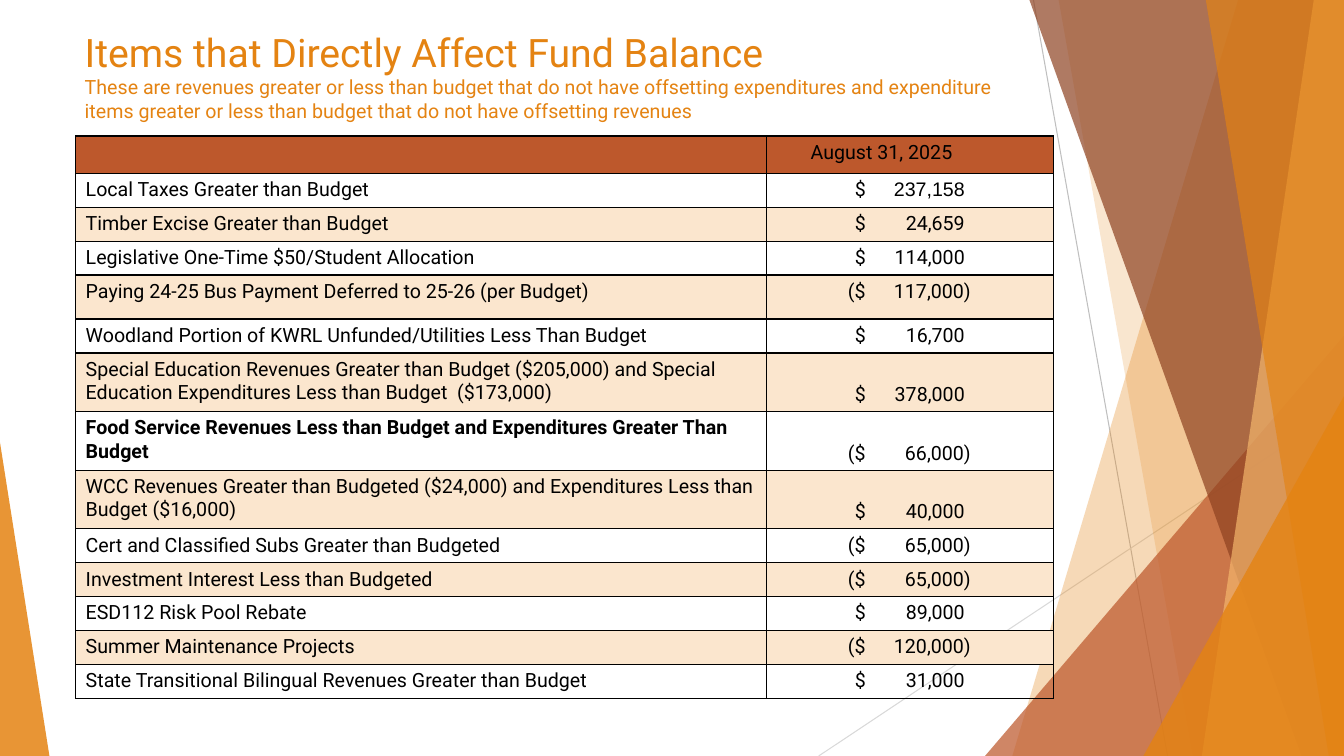
from lxml.etree import SubElement
from pptx import Presentation
from pptx.dml.color import RGBColor
from pptx.enum.shapes import MSO_CONNECTOR, MSO_SHAPE
from pptx.enum.text import MSO_ANCHOR, MSO_AUTO_SIZE, PP_ALIGN
from pptx.oxml.ns import qn
from pptx.util import Inches, Pt

ORANGE = RGBColor(0xE4, 0x83, 0x12)
RUST = RGBColor(0xBD, 0x58, 0x2C)
BROWN = RGBColor(0x8E, 0x42, 0x21)
PEACH = RGBColor(0xF3, 0xB5, 0x6C)
CREAM = RGBColor(0xFB, 0xE6, 0xCE)
SILVER = RGBColor(0xBF, 0xBF, 0xBF)
PALE_GRAY = RGBColor(0xD9, 0xD9, 0xD9)
BLACK = RGBColor(0, 0, 0)

# Content
HEADING = "Items that Directly Affect Fund Balance"
EXPLANATION = (
    "These are revenues greater or less than budget that do not have offsetting "
    "expenditures and expenditure items greater or less than budget that do not "
    "have offsetting revenues"
)
PERIOD = "August 31, 2025"
# Item, amount, row height relative to a one-line row
ITEMS = [
    ("Local Taxes Greater than Budget", 237158, 1),
    ("Timber Excise Greater than Budget", 24659, 1),
    ("Legislative One-Time $50/Student Allocation", 114000, 1),
    ("Paying 24-25 Bus Payment Deferred to 25-26 (per Budget)", -117000, 1.3),
    ("Woodland Portion of KWRL Unfunded/Utilities Less Than Budget", 16700, 1),
    ("Special Education Revenues Greater than Budget ($205,000) and Special "
     "Education Expenditures Less than Budget  ($173,000)", 378000, 1.73),
    ("Food Service Revenues Less than Budget and Expenditures Greater Than Budget",
     -66000, 1.73),
    ("WCC Revenues Greater than Budgeted ($24,000) and Expenditures Less than "
     "Budget ($16,000)", 40000, 1.73),
    ("Cert and Classified Subs Greater than Budgeted", -65000, 1),
    ("Investment Interest Less than Budgeted", -65000, 1),
    ("ESD112 Risk Pool Rebate", 89000, 1),
    ("Summer Maintenance Projects", -120000, 1),
    ("State Transitional Bilingual Revenues Greater than Budget", 31000, 1),
]
BOLD_ITEM = "Food Service"
ARIAL_AMOUNT = 237158
HEADER_WEIGHT = 1.1

# Layout
SLIDE_W, SLIDE_H = 13.33, 7.5
TITLE_BOX = (0.74, 0.19, 9.4, 1.17)
TABLE_X, TABLE_Y, TABLE_H = 0.75, 1.35, 5.58
COLUMNS = (6.85, 2.85)
RAYS = [  # from, to, colour
    ((10.25, 0), (11.58, SLIDE_H), SILVER),
    ((SLIDE_W, 4.03), (8.12, SLIDE_H), PALE_GRAY),
]
# Bands reach the right edge: left x at the top, left x at the bottom.
# Triangles: left, top, width, apex position.
FACETS = [
    ("band", (12.28, 10.04), ORANGE, 30),
    ("band", (10.5, 11.83), ORANGE, 20),
    ("triangle", (9.77, 3.33, 3.56, 1), RUST, 72),
    ("band", (10.21, 12.91), BROWN, 70),
    ("band", (13.03, 11.92), PEACH, 70),
    ("band", (11.96, 13.18), ORANGE, 65),
    ("triangle", (11.34, 3.93, 1.99, 1), ORANGE, 80),
    ("triangle", (0, 4.39, 0.49, 0), ORANGE, 85),
]


def style_font(font, color=BLACK, **values):
    for name, value in {"name": "Roboto", "size": Pt(14), "bold": False, **values}.items():
        setattr(font, name, value)
    font.color.rgb = color


def add_facet(shapes, kind, geometry, color, opacity):
    if kind == "band":
        top_x, bottom_x = geometry
        builder = shapes.build_freeform(Inches(top_x), 0)
        corners = [(SLIDE_W, 0), (SLIDE_W, SLIDE_H), (bottom_x, SLIDE_H)]
        builder.add_line_segments([(Inches(x), Inches(y)) for x, y in corners])
        facet = builder.convert_to_shape()
    else:
        x, y, width, apex = geometry
        facet = shapes.add_shape(MSO_SHAPE.ISOSCELES_TRIANGLE, Inches(x), Inches(y),
                                 Inches(width), Inches(SLIDE_H - y))
        facet.adjustments[0] = apex
    facet.shadow.inherit = False
    facet.line.fill.background()
    facet.fill.solid()
    facet.fill.fore_color.rgb = color
    solid = facet.fill._xPr.find(qn("a:solidFill"))
    SubElement(solid[0], qn("a:alpha"), val=str(opacity * 1000))


def format_cell(cell, fill):
    # Borders come before the fill in the cell properties
    properties = cell._tc.get_or_add_tcPr()
    for side in ("lnL", "lnR", "lnT", "lnB"):
        border = SubElement(properties, qn(f"a:{side}"), w=str(Pt(1)))
        solid = SubElement(border, qn("a:solidFill"))
        SubElement(solid, qn("a:srgbClr"), val=str(BLACK))
    if fill is None:
        cell.fill.background()
    else:
        cell.fill.solid()
        cell.fill.fore_color.rgb = fill


def write_amount(cell, amount):
    negative = amount < 0
    cell.vertical_anchor = MSO_ANCHOR.BOTTOM if abs(amount) in (378000, 66000, 40000) else MSO_ANCHOR.TOP
    cell.margin_left = Inches(0.81 if negative else 0.88)
    paragraph = cell.text_frame.paragraphs[0]
    tabs = SubElement(paragraph._p.get_or_add_pPr(), qn("a:tabLst"))
    SubElement(tabs, qn("a:tab"), pos=str(Inches(1.22 if negative else 1.09)), algn="r")
    sign, number = ("($\t", f"{-amount:,})") if negative else ("$\t", f"{amount:,}")
    number_font = "Arial" if amount == ARIAL_AMOUNT else "Roboto"
    for text, name in ((sign, "Roboto"), (number, number_font)):
        run = paragraph.add_run()
        run.text = text
        style_font(run.font, name=name)


def write_text(cell, text, **values):
    run = cell.text_frame.paragraphs[0].add_run()
    run.text = text
    style_font(run.font, **values)


def main():
    deck = Presentation()
    deck.slide_width, deck.slide_height = Inches(SLIDE_W), Inches(SLIDE_H)
    slide = deck.slides.add_slide(deck.slide_layouts[5])
    shapes = slide.shapes

    # Background rays and facets
    for start, end, color in RAYS:
        ray = shapes.add_connector(MSO_CONNECTOR.STRAIGHT, *map(Inches, start + end))
        ray.line.color.rgb = color
        ray.line.width = Pt(0.75)
        SubElement(ray._element.spPr, qn("a:effectLst"))
    for facet in FACETS:
        add_facet(shapes, *facet)

    # Title with its explanation
    title = shapes.title
    for side, length in zip(("left", "top", "width", "height"), TITLE_BOX):
        setattr(title, side, Inches(length))
    frame = title.text_frame
    frame_format = {"word_wrap": True, "auto_size": MSO_AUTO_SIZE.NONE,
                    "vertical_anchor": MSO_ANCHOR.TOP, "margin_top": Inches(0.09)}
    for name, value in frame_format.items():
        setattr(frame, name, value)
    paragraph = frame.paragraphs[0]
    paragraph.alignment = PP_ALIGN.LEFT
    heading = paragraph.add_run()
    heading.text = HEADING
    style_font(heading.font, ORANGE, size=Pt(28))
    paragraph.add_line_break()
    explanation = paragraph.add_run()
    explanation.text = EXPLANATION
    style_font(explanation.font, ORANGE)

    # Table of items
    weights = [HEADER_WEIGHT] + [weight for _, _, weight in ITEMS]
    table = shapes.add_table(len(weights), len(COLUMNS), Inches(TABLE_X), Inches(TABLE_Y),
                             Inches(sum(COLUMNS)), Inches(TABLE_H)).table
    table.first_row = table.horz_banding = False
    for column, width in zip(table.columns, COLUMNS):
        column.width = Inches(width)
    for index, (row, weight) in enumerate(zip(table.rows, weights)):
        row.height = Inches(TABLE_H * weight / sum(weights))
        fill = RUST if index == 0 else CREAM if index % 2 == 0 else None
        for cell in row.cells:
            format_cell(cell, fill)

    corner, period = table.rows[0].cells
    corner.margin_top = corner.margin_bottom = 0
    period.margin_left = Inches(0.44)
    write_text(period, PERIOD)
    for index, (item, amount, _) in enumerate(ITEMS, start=1):
        write_text(table.cell(index, 0), item, bold=item.startswith(BOLD_ITEM))
        write_amount(table.cell(index, 1), amount)

    deck.save("out.pptx")


if __name__ == "__main__":
    main()
